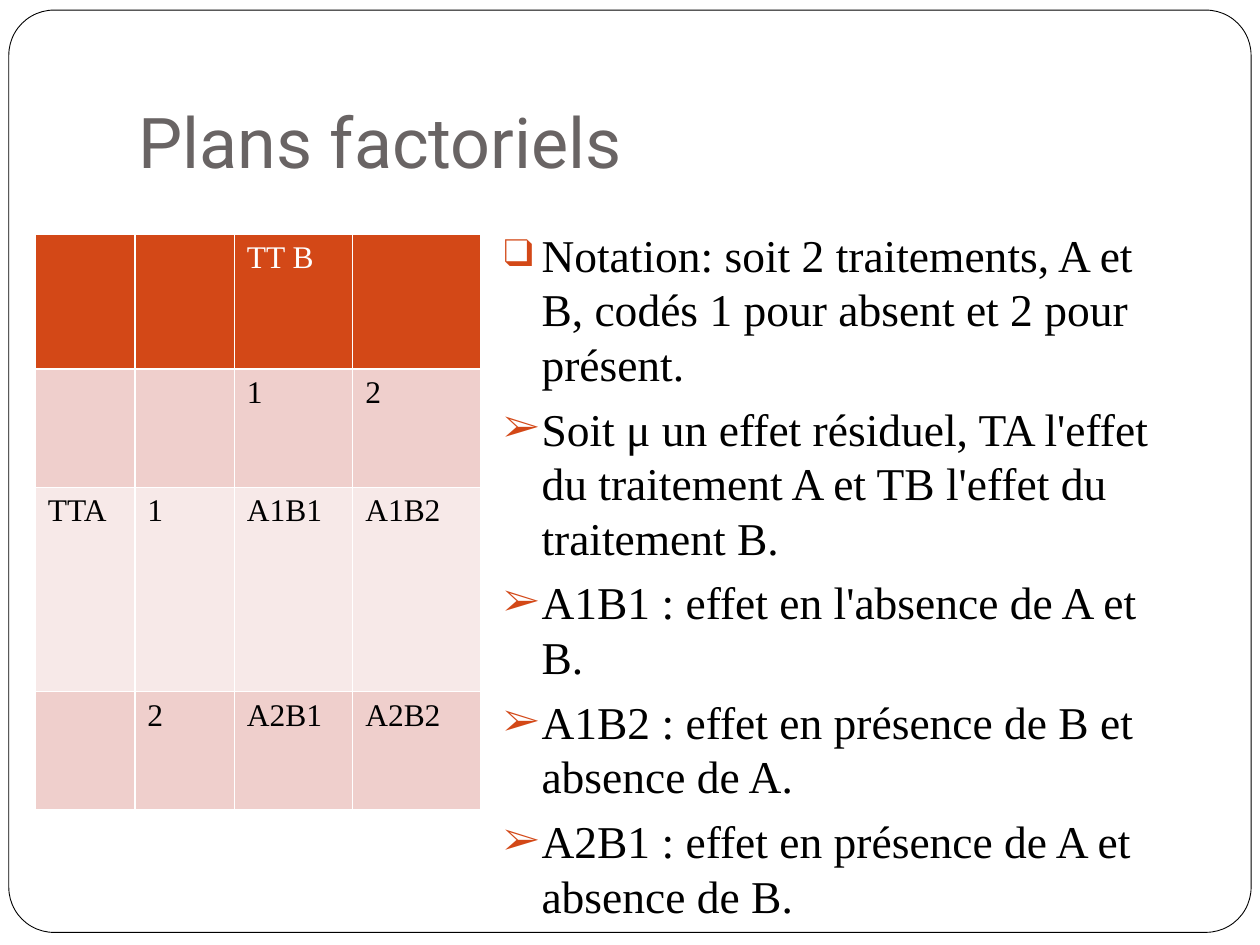
from lxml import etree
from pptx import Presentation
from pptx.dml.color import RGBColor
from pptx.enum.shapes import MSO_SHAPE
from pptx.enum.text import MSO_ANCHOR, PP_ALIGN
from pptx.oxml.ns import qn
from pptx.util import Inches, Pt

ROUNDED = MSO_SHAPE.ROUNDED_RECTANGLE
BOTTOM = MSO_ANCHOR.BOTTOM
LEFT = PP_ALIGN.LEFT
TITLE_ONLY = 5

WIDTH, HEIGHT = 10, 7.5
COLORS = {
    "white": "FFFFFF",
    "black": "000000",
    "title": "696464",
    "accent": "D34817",
    "band": "EFCFCC",
    "light": "F7E9E8",
}
TITLE_FONT = {"name": "Roboto", "size": Pt(40)}
CELL_FONT = {"name": "Times New Roman", "size": Pt(18), "bold": False}
BODY_FONT = {"name": "Times New Roman", "size": Pt(26)}
BODY_PARA = {"alignment": LEFT, "space_before": Pt(5.8), "line_spacing": 1.0}

COLUMNS = [0.79, 0.79, 0.94, 1.02]
ROWS = [1.07, 0.94, 1.62, 0.94]
ROW_FILLS = ["accent", "band", "light", "band"]
CELLS = [
    ["", "", "TT B", ""],
    ["", "", "1", "2"],
    ["TTA", "1", "A1B1", "A1B2"],
    ["", "2", "A2B1", "A2B2"],
]
NOTES = [
    ("❑", "Notation: soit 2 traitements, A et B, codés 1 pour absent et 2 pour présent."),
    ("➢", "Soit μ un effet résiduel, TA l'effet du traitement A et TB l'effet du traitement B."),
    ("➢", "A1B1 : effet en l'absence de A et B."),
    ("➢", "A1B2 : effet en présence de B et absence de A."),
    ("➢", "A2B1 : effet en présence de A et absence de B."),
]


def color(name):
    return RGBColor.from_string(COLORS[name])


def apply(target, values):
    for key, value in values.items():
        setattr(target, key, value)


def write(para, text, font, color_name):
    span = para.add_run()
    span.text = text
    apply(span.font, font)
    span.font.color.rgb = color(color_name)


def add_frame(page):
    margin = 0.07
    frame = page.shapes.add_shape(
        ROUNDED, Inches(margin), Inches(0.08),
        Inches(WIDTH - 2 * margin), Inches(7.32))
    frame.adjustments[0] = 0.049
    frame.shadow.inherit = False
    frame.fill.solid()
    frame.fill.fore_color.rgb = color("white")
    frame.line.color.rgb = color("black")
    frame.line.width = Pt(0.5)
    page.shapes.title._element.addprevious(frame._element)


def add_title(page, text):
    title = page.shapes.title
    apply(title, {"left": Inches(0.1 * WIDTH), "top": Inches(0.04 * HEIGHT),
                  "width": Inches(0.85 * WIDTH), "height": Inches(1.25)})
    box = title.text_frame
    apply(box, {"vertical_anchor": BOTTOM, "word_wrap": True,
                "margin_left": Inches(0.1), "margin_right": Inches(0.1),
                "margin_top": Inches(0.05), "margin_bottom": Inches(0.1)})
    box.paragraphs[0].alignment = LEFT
    write(box.paragraphs[0], text, TITLE_FONT, "title")


def add_borders(cell):
    properties = cell._tc.get_or_add_tcPr()
    for index, tag in enumerate(["a:lnL", "a:lnR", "a:lnT", "a:lnB"]):
        line = etree.Element(qn(tag), w=str(Pt(1)))
        fill = etree.SubElement(line, qn("a:solidFill"))
        etree.SubElement(fill, qn("a:srgbClr"), val=COLORS["white"])
        properties.insert(index, line)


def add_grid(page):
    table = page.shapes.add_table(
        len(ROWS), len(COLUMNS), Inches(0.28), Inches(1.86),
        Inches(sum(COLUMNS)), Inches(sum(ROWS))).table
    for column, width in zip(table.columns, COLUMNS):
        column.width = Inches(width)
    for r, height in enumerate(ROWS):
        table.rows[r].height = Inches(height)
        for c, text in enumerate(CELLS[r]):
            cell = table.cell(r, c)
            cell.fill.solid()
            cell.fill.fore_color.rgb = color(ROW_FILLS[r])
            add_borders(cell)
            if text:
                para = cell.text_frame.paragraphs[0]
                write(para, text, CELL_FONT, "black" if r else "white")


def add_bullet(para, symbol):
    properties = para._p.get_or_add_pPr()
    indent = Inches(0.3)
    properties.set("marL", str(indent))
    properties.set("indent", str(-indent))
    tint = etree.SubElement(properties, qn("a:buClr"))
    etree.SubElement(tint, qn("a:srgbClr"), val=COLORS["accent"])
    etree.SubElement(properties, qn("a:buSzPct"), val="85000")
    etree.SubElement(properties, qn("a:buFont"), typeface=BODY_FONT["name"])
    etree.SubElement(properties, qn("a:buChar"), char=symbol)


def add_notes(page):
    box = page.shapes.add_textbox(
        Inches(0.39 * WIDTH), Inches(1.75),
        Inches(0.56 * WIDTH), Inches(0.66 * HEIGHT)).text_frame
    box.word_wrap = True
    for index, (symbol, text) in enumerate(NOTES):
        para = box.add_paragraph() if index else box.paragraphs[0]
        apply(para, BODY_PARA)
        add_bullet(para, symbol)
        write(para, text, BODY_FONT, "black")


def main():
    deck = Presentation()
    deck.slide_width, deck.slide_height = Inches(WIDTH), Inches(HEIGHT)
    page = deck.slides.add_slide(deck.slide_layouts[TITLE_ONLY])
    add_frame(page)
    add_title(page, "Plans factoriels")
    add_grid(page)
    add_notes(page)
    deck.save("out.pptx")


if __name__ == "__main__":
    main()
